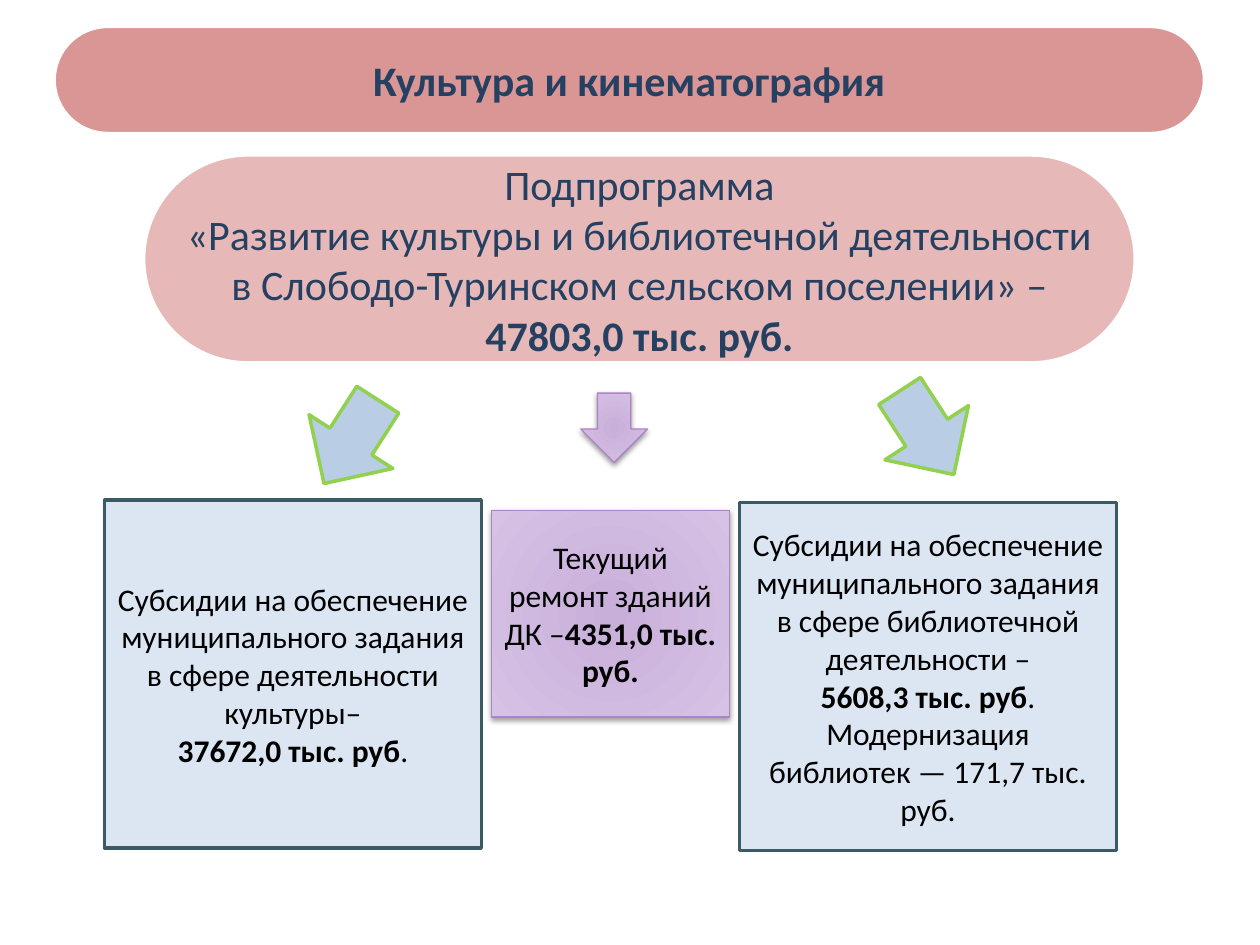
from lxml.etree import SubElement
from pptx import Presentation
from pptx.dml.color import RGBColor
from pptx.enum.shapes import MSO_SHAPE as Shape
from pptx.enum.text import MSO_ANCHOR as Anchor, PP_ALIGN as Align
from pptx.oxml.ns import qn
from pptx.util import Inches, Pt

COLORS = {
    "white": "FFFFFF", "black": "000000", "navy": "254061",
    "rose": "D99694", "pale_rose": "E6B9B8",
    "blue": "B9CDE5", "pale_blue": "DCE6F2", "green": "92D050", "teal": "3A5B63",
    "lilac": "C8AFD9", "pale_lilac": "D7C2E6", "violet": "AD84C6",
}
COLUMNS, ROWS = 100, 75
BANNER = (4.3, 2.1, 91.3, 8.5)
PROGRAM = (11.4, 12.3, 78.7, 16.5)
FRAME = {"word_wrap": True, "vertical_anchor": Anchor.MIDDLE,
         "margin_left": Inches(0.1), "margin_right": Inches(0.1),
         "margin_top": Inches(0.05), "margin_bottom": Inches(0.05)}
ROSE_PILL = {"fill": "rose", "line": "white"}
PALE_PILL = {"fill": "pale_rose", "line": "white"}
BLUE_ARROW = {"fill": "blue", "line": "green"}
BLUE_CARD = {"fill": "pale_blue", "line": "teal"}
LILAC = {"fill": ("lilac", "pale_lilac"), "line": "violet", "width": 0.75}

BRANCHES = [
    {"arrow": (23.9, 31.1, 7.9, 7.9), "turn": 32.7, "card": (8.3, 39.7, 29.9, 27.6),
     "arrow_look": BLUE_ARROW, "card_look": BLUE_CARD,
     "text": [[("Субсидии на обеспечение муниципального задания "
                "в сфере деятельности культуры–", False)],
              [("37672,0 тыс. руб", True), (".", False)]]},
    {"arrow": (69.6, 30.4, 7.9, 7.9), "turn": 327, "card": (58.7, 39.9, 29.9, 27.6),
     "arrow_look": BLUE_ARROW, "card_look": BLUE_CARD,
     "text": [[("Субсидии на обеспечение муниципального задания "
                "в сфере библиотечной деятельности –", False)],
              [("5608,3 тыс. руб", True), (".", False)],
              [("Модернизация библиотек — 171,7 тыс. руб.", False)]]},
    {"arrow": (46.1, 31.2, 5.3, 5.5), "turn": 0, "card": (39, 40.5, 18.9, 16.4),
     "arrow_look": LILAC, "card_look": LILAC,
     "text": [[("Текущий ремонт зданий ДК –", False), ("4351,0 тыс. руб.", True)]]},
]


def color(name):
    """Return the named colour."""
    return RGBColor.from_string(COLORS[name])


def apply(target, values):
    """Set every attribute listed in values on the target."""
    for name, value in values.items():
        setattr(target, name, value)


def place(deck, box):
    """Turn a box in grid units into slide lengths."""
    cell = deck.slide_width / COLUMNS, deck.slide_height / ROWS
    return [round(length * cell[index % 2]) for index, length in enumerate(box)]


def add_glow(shape, stops):
    """Fill the shape from its centre outwards and drop a soft shadow below it."""
    shape.fill.gradient()
    for stop, name in zip(shape.fill.gradient_stops, stops):
        stop.color.rgb = color(name)
    properties = shape._element.spPr
    gradient = properties.find(qn("a:gradFill"))
    gradient.remove(gradient.find(qn("a:lin")))
    circle = SubElement(gradient, qn("a:path"), {"path": "circle"})
    SubElement(circle, qn("a:fillToRect"), dict.fromkeys("ltrb", "50000"))
    shadow = SubElement(properties.find(qn("a:effectLst")), qn("a:outerShdw"), {
        "blurRad": str(Pt(3.1)), "dist": str(Pt(1.6)), "dir": "5400000",
        "rotWithShape": "0"})
    tint = SubElement(shadow, qn("a:srgbClr"), {"val": COLORS["black"]})
    SubElement(tint, qn("a:alpha"), {"val": "38000"})


def add_figure(deck, page, kind, box, look):
    """Draw a preset shape with the given fill and outline."""
    shape = page.shapes.add_shape(kind, *place(deck, box))
    shape.shadow.inherit = False
    shape.line.color.rgb = color(look["line"])
    shape.line.width = Pt(look.get("width", 2))
    if isinstance(look["fill"], tuple):
        add_glow(shape, look["fill"])
    else:
        shape.fill.solid()
        shape.fill.fore_color.rgb = color(look["fill"])
    return shape


def write(shape, paragraphs, size, ink):
    """Write centred paragraphs made of (text, bold) spans."""
    frame = shape.text_frame
    apply(frame, FRAME)
    for index, spans in enumerate(paragraphs):
        para = frame.add_paragraph() if index else frame.paragraphs[0]
        para.alignment = Align.CENTER
        for text, bold in spans:
            span = para.add_run()
            span.text = text
            apply(span.font, {"name": "Calibri", "size": Pt(size), "bold": bold})
            span.font.color.rgb = color(ink)


def add_pill(deck, page, box, look):
    """Draw a rectangle with fully rounded ends."""
    pill = add_figure(deck, page, Shape.ROUNDED_RECTANGLE, box, look)
    pill.adjustments[0] = 0.5
    return pill


def add_banner(deck, page, box):
    """Set the slide title on a rose pill."""
    pill = add_pill(deck, page, box, ROSE_PILL)
    title = page.shapes.title
    pill._element.addnext(title._element)
    apply(title, dict(zip(("left", "top", "width", "height"), place(deck, box))))
    write(title, [[("Культура и кинематография", True)]], 24, "navy")


def add_program(deck, page, box):
    """Name the subprogram and its total."""
    pill = add_pill(deck, page, box, PALE_PILL)
    write(pill, [[("Подпрограмма", False)],
                 [("«Развитие культуры и библиотечной деятельности "
                   "в Слободо-Туринском сельском поселении» – ", False),
                  ("47803,0 тыс. руб.", True)]], 24, "navy")


def add_branch(deck, page, branch):
    """Draw one arrow and the spending card it points to."""
    arrow = add_figure(deck, page, Shape.DOWN_ARROW, branch["arrow"], branch["arrow_look"])
    arrow.rotation = branch["turn"]
    card = add_figure(deck, page, Shape.RECTANGLE, branch["card"], branch["card_look"])
    write(card, branch["text"], 18, "black")


def main():
    """Build the slide and save it."""
    deck = Presentation()
    apply(deck, {"slide_width": Inches(10), "slide_height": Inches(7.5)})
    page = deck.slides.add_slide(deck.slide_layouts[5])
    add_banner(deck, page, BANNER)
    add_program(deck, page, PROGRAM)
    for branch in BRANCHES:
        add_branch(deck, page, branch)
    deck.save("out.pptx")


if __name__ == "__main__":
    main()
